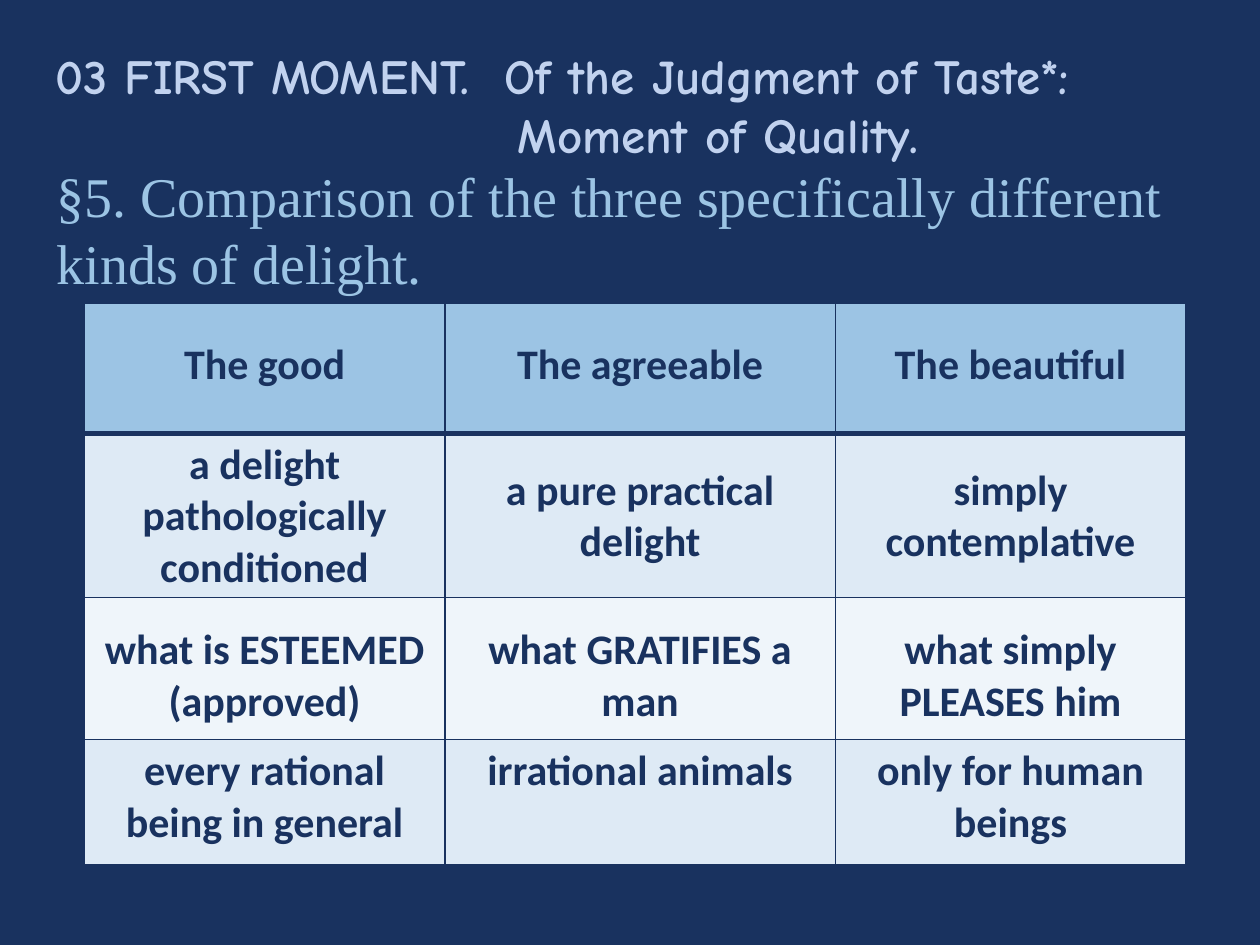
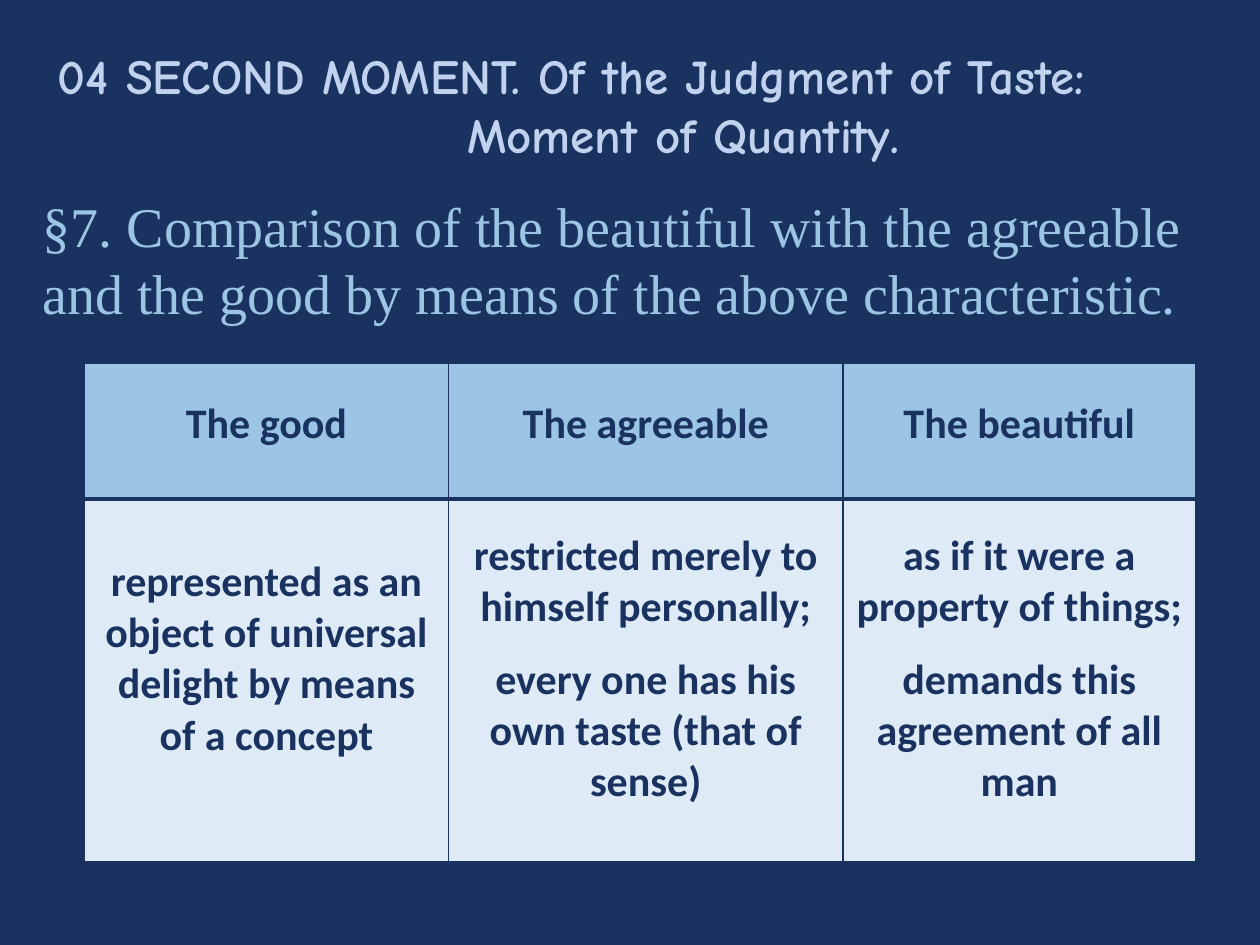
import pptx
import pptx.dml.color
import pptx.enum.text
import pptx.oxml
import pptx.oxml.ns
import pptx.util

Inches = pptx.util.Inches
Pt = pptx.util.Pt
RGB = pptx.dml.color.RGBColor.from_string

COLORS = {
    "navy": "19325F",
    "title": "C1D2EF",
    "sky": "9CC4E4",
    "band": "DEEAF5",
    "pale": "EFF5FA",
}
ROW_FILLS = ["sky", "band", "pale", "band"]
HEADERS = ["The good", "The agreeable", "The beautiful"]
LINE_HEIGHT = 1.22  # Calibri line height relative to its size

# Each title line has its indent in inches. Each body row has the space in
# points above its cells, and each cell is a list of paragraphs.
SLIDES = [
    {
        "title": [("03 FIRST MOMENT.  Of the Judgment of Taste*:", 0.03),
                  ("Moment of Quality.", 3.7)],
        "section": "§5. Comparison of the three specifically different kinds of delight.",
        "section_box": (0.35, 1.23, 9.29, 1.18),
        "table_top": 2.41,
        "columns": [2.86, 3.1, 2.78],
        "rows": [1.03, 1.25, 1.13, 0.99],
        "body": [
            ([0, 12, 12], [["a delight pathologically conditioned"],
                           ["a pure practical delight"],
                           ["simply contemplative"]]),
            ([10, 10, 10], [["what is ESTEEMED (approved)"],
                            ["what GRATIFIES a man"],
                            ["what simply PLEASES him"]]),
            ([0, 0, 0], [["every rational being in general"],
                         ["irrational animals"],
                         ["only for human beings"]]),
        ],
    },
    {
        "title": [("04 SECOND MOMENT. Of the Judgment of Taste:", 0.05),
                  ("Moment of Quantity.", 3.3)],
        "section": "§7. Comparison of the beautiful with the agreeable and the good "
                   "by means of the above characteristic.",
        "section_box": (0.24, 1.47, 9.65, 1.18),
        "table_top": 2.88,
        "columns": [2.89, 3.13, 2.8],
        "rows": [1.08, 2.88],
        "body": [
            ([24, 12, 12], [
                ["represented as an object of universal delight by means of a concept"],
                ["restricted merely to himself personally;",
                 "every one has his own taste (that of sense)"],
                ["as if it were a property of things;",
                 "demands this agreement of all man"]]),
        ],
    },
]


def style_paragraph(paragraph, name, size, color, bold=False):
    paragraph.font.name = name
    paragraph.font.size = Pt(size)
    paragraph.font.bold = bold
    paragraph.font.color.rgb = RGB(COLORS[color])


def set_borders(cell, row_index):
    """Navy rules of 1 pt, with 3 pt below the header row."""
    widths = {"L": 1, "R": 1,
              "T": 3 if row_index == 1 else 1,
              "B": 3 if row_index == 0 else 1}
    properties = cell._tc.get_or_add_tcPr()
    for position, (side, width) in enumerate(widths.items()):
        properties.insert(position, pptx.oxml.parse_xml(
            f'<a:ln{side} {pptx.oxml.ns.nsdecls("a")} w="{Pt(width)}">'
            f'<a:solidFill><a:srgbClr val="{COLORS["navy"]}"/></a:solidFill>'
            f'</a:ln{side}>'))


presentation = pptx.Presentation()
presentation.slide_width = Inches(10)
presentation.slide_height = Inches(7.5)

for content in SLIDES:
    slide = presentation.slides.add_slide(presentation.slide_layouts[6])
    slide.background.fill.solid()
    slide.background.fill.fore_color.rgb = RGB(COLORS["navy"])

    # Title, one indented paragraph per line
    title = slide.shapes.add_textbox(
        Inches(0.31), Inches(0.31), Inches(8.98), Inches(1.04)).text_frame
    title.word_wrap = True
    title.text = "\n".join(text for text, indent in content["title"])
    for paragraph, (text, indent) in zip(title.paragraphs, content["title"]):
        paragraph._p.get_or_add_pPr().set("marL", str(Inches(indent)))
        style_paragraph(paragraph, "Comic Neue", 28, "title", bold=True)

    # Section heading
    section = slide.shapes.add_textbox(
        *[Inches(length) for length in content["section_box"]]).text_frame
    section.word_wrap = True
    section.text = content["section"]
    style_paragraph(section.paragraphs[0], "Times New Roman", 32, "sky")

    # Comparison table
    columns, rows = content["columns"], content["rows"]
    table = slide.shapes.add_table(
        len(rows), len(columns), Inches(0.67), Inches(content["table_top"]),
        Inches(sum(columns)), Inches(sum(rows))).table
    for column, width in zip(table.columns, columns):
        column.width = Inches(width)
    for row, height in zip(table.rows, rows):
        row.height = Inches(height)

    header = ([14, 14, 14], [[text] for text in HEADERS])
    for row_index, (spaces, texts) in enumerate([header] + content["body"]):
        for column_index, (space, lines) in enumerate(zip(spaces, texts)):
            cell = table.cell(row_index, column_index)
            cell.fill.solid()
            cell.fill.fore_color.rgb = RGB(COLORS[ROW_FILLS[row_index]])
            set_borders(cell, row_index)
            cell.margin_top = Inches(0.05) + Pt(space * LINE_HEIGHT)
            cell.text = "\n".join(lines)
            for line_index, paragraph in enumerate(cell.text_frame.paragraphs):
                paragraph.alignment = pptx.enum.text.PP_ALIGN.CENTER
                style_paragraph(paragraph, "Calibri", 24, "navy", bold=True)
                if line_index > 0:
                    paragraph.space_before = Pt(12)

presentation.save("out.pptx")
